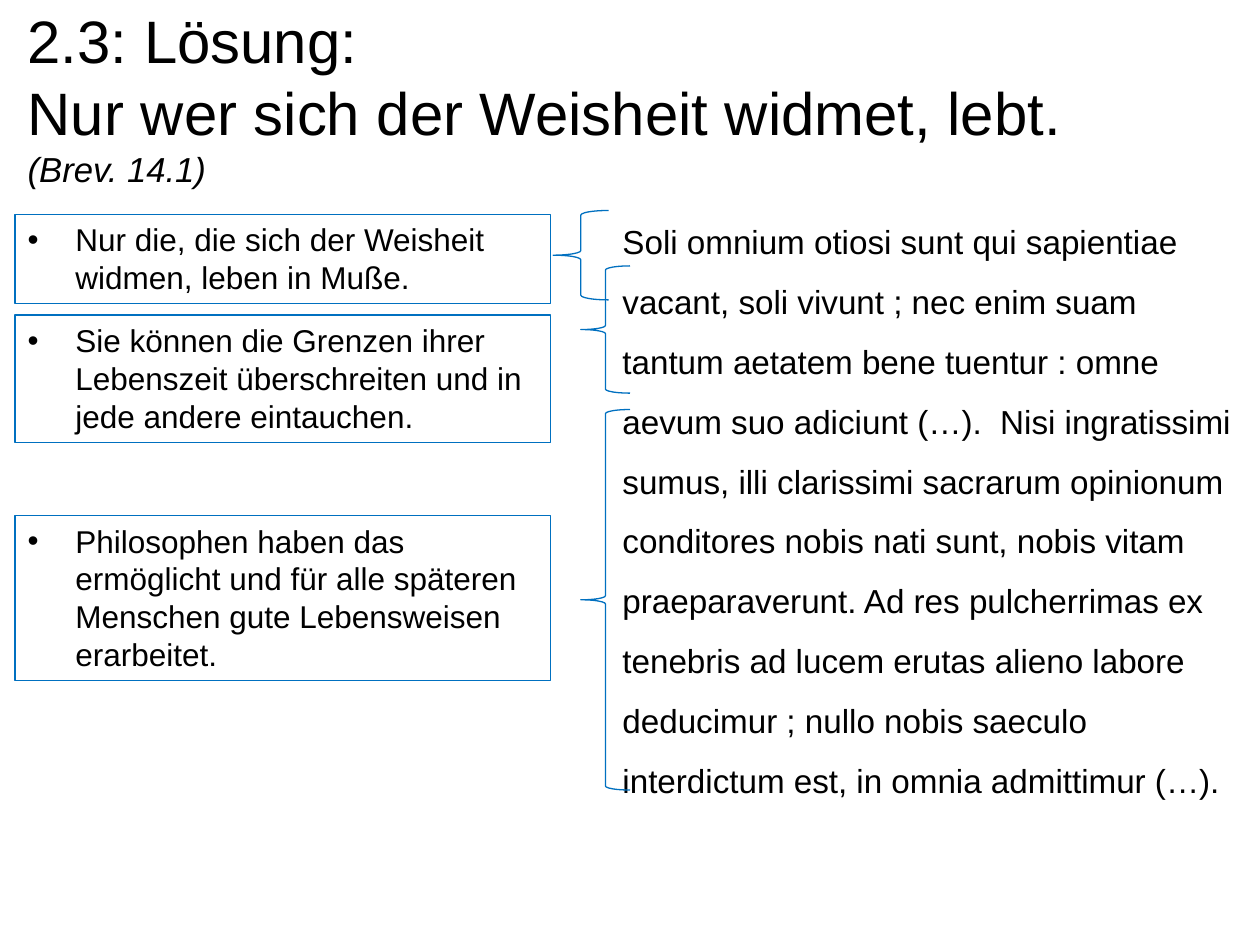
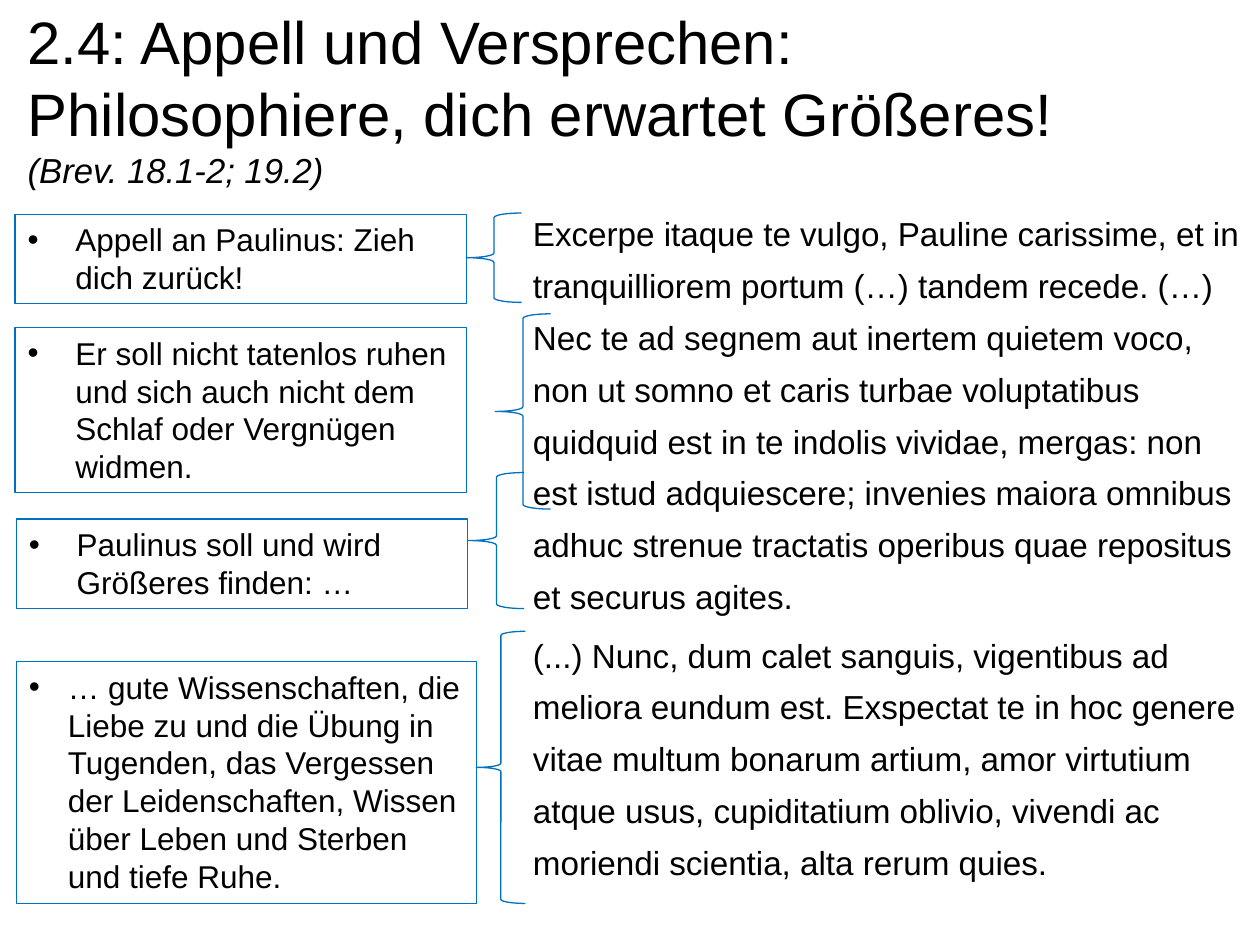
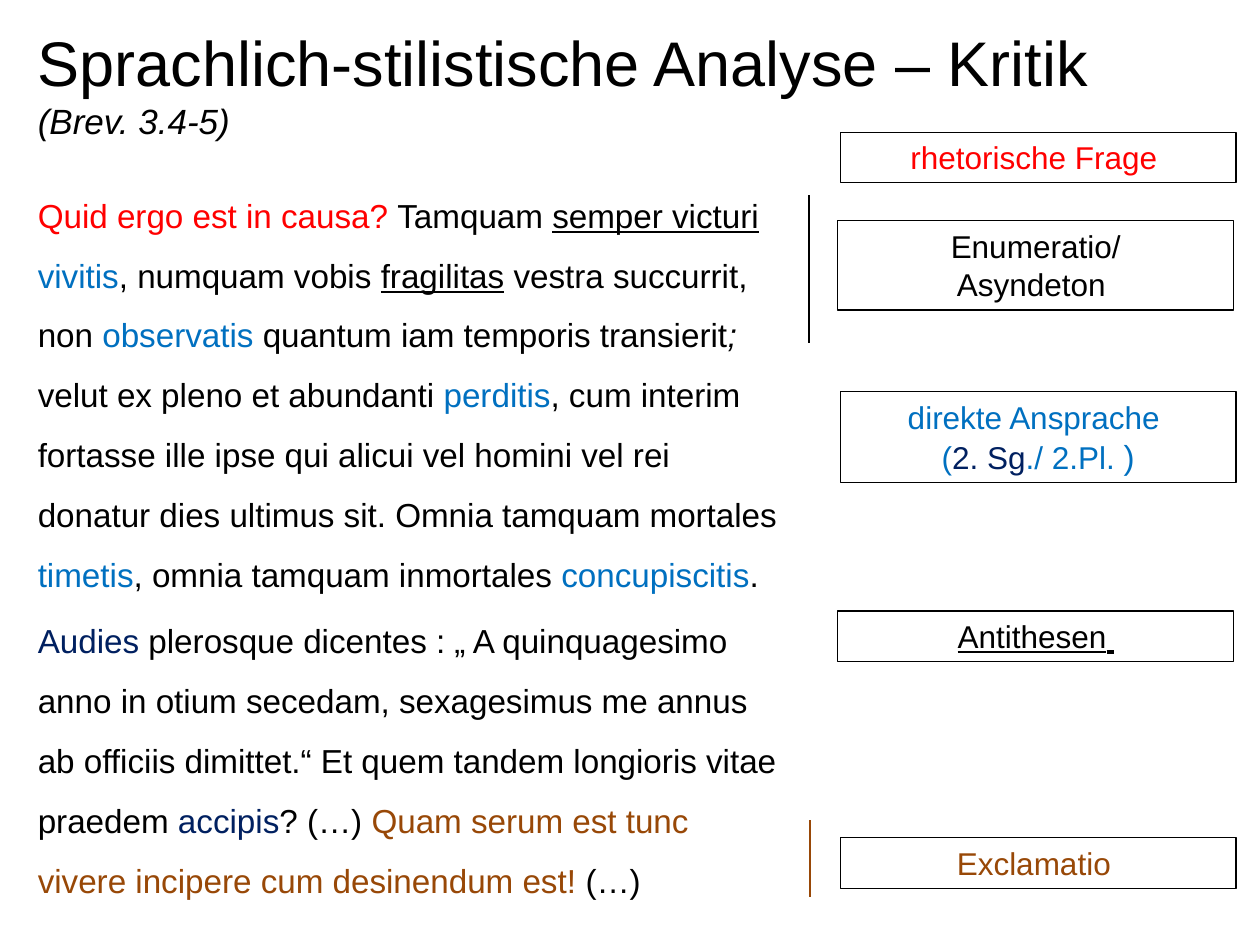
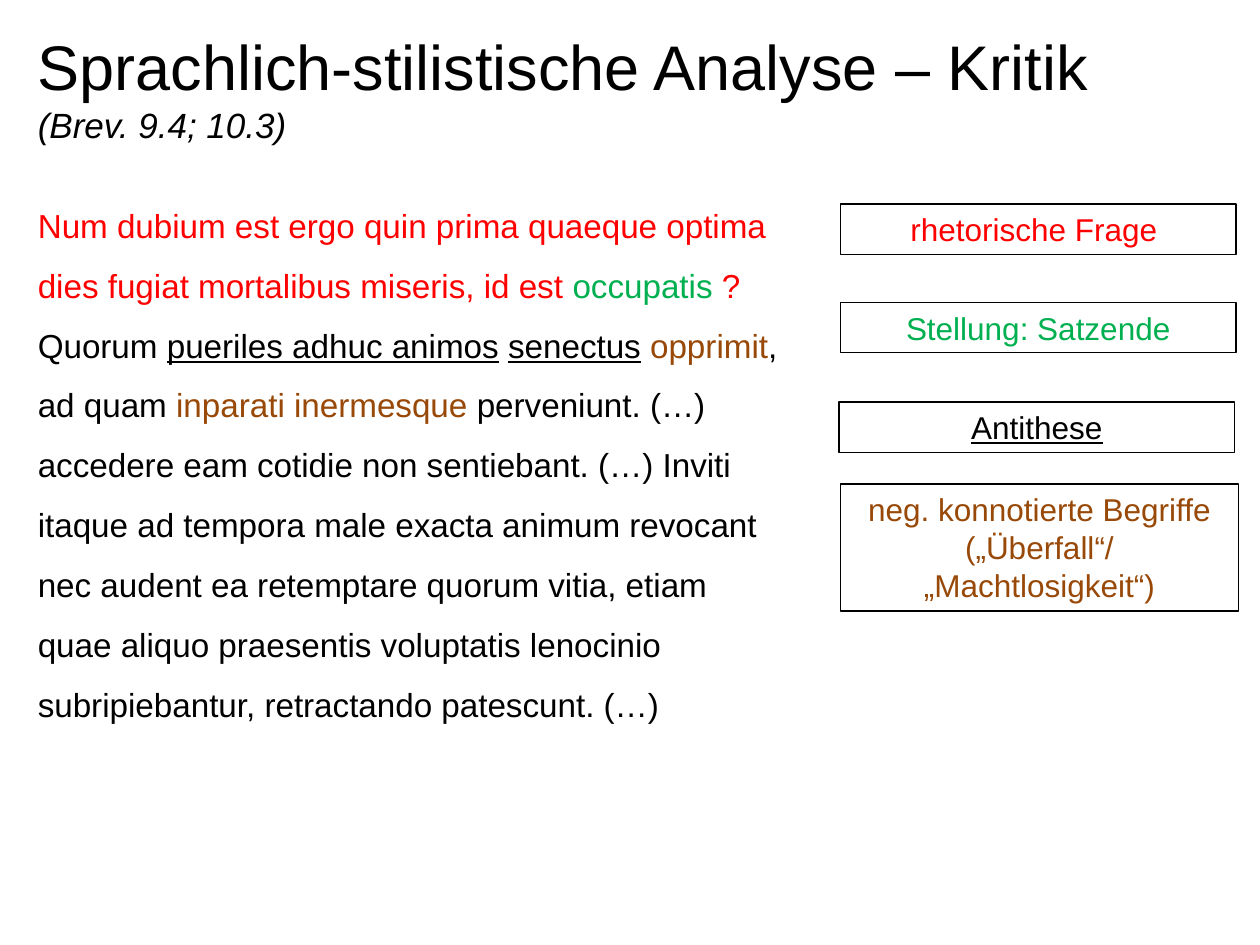
"""Builds four slides on Seneca's De brevitate vitae: two on its argument, two on its style."""
from copy import deepcopy

from lxml import etree
from pptx import Presentation
from pptx.dml.color import RGBColor
from pptx.enum.shapes import MSO_CONNECTOR, MSO_SHAPE
from pptx.enum.text import MSO_ANCHOR, MSO_AUTO_SIZE, PP_ALIGN
from pptx.oxml.ns import qn
from pptx.util import Inches, Pt

RECTANGLE, BRACE = MSO_SHAPE.RECTANGLE, MSO_SHAPE.RIGHT_BRACE
STRAIGHT = MSO_CONNECTOR.STRAIGHT
TOP, MIDDLE = MSO_ANCHOR.TOP, MSO_ANCHOR.MIDDLE
FIXED, GROW = MSO_AUTO_SIZE.NONE, MSO_AUTO_SIZE.SHAPE_TO_FIT_TEXT
LEFT, CENTER = PP_ALIGN.LEFT, PP_ALIGN.CENTER

INK, ACCENT, BROWN_HEX = "000000", "0070C0", "984807"
PLAIN = {}
RED = {"colour": "FF0000"}
BLUE = {"colour": ACCENT}
NAVY = {"colour": "002060"}
BROWN = {"colour": BROWN_HEX}
GREEN = {"colour": "00B050"}
UNDERLINED = {"underline": True}
ITALIC = {"italic": True}

deck = Presentation()
deck.slide_width, deck.slide_height = Inches(10), Inches(7.5)
COLUMN, ROW = deck.slide_width / 100, deck.slide_height / 75


def write(paragraph, runs, size):
    """Add styled runs to a paragraph; a newline ends a line."""
    for text, style in runs:
        lines = text.split("\n")
        for number, line in enumerate(lines):
            if line:
                run = paragraph.add_run()
                run.text = line
                run.font.name = style.get("font", "Arial")
                run.font.size = Pt(style.get("size", size))
                run.font.color.rgb = RGBColor.from_string(style.get("colour", INK))
                run.font.underline = style.get("underline", False)
                run.font.italic = style.get("italic", False)
            if number < len(lines) - 1:
                paragraph.add_line_break()
                paragraph._p[-1].append(deepcopy(run.font._element))


def place(shape, cell):
    """Put a shape on the grid of 100 columns and 75 rows."""
    column, row, columns, rows = cell
    shape.left, shape.top = round(column * COLUMN), round(row * ROW)
    shape.width, shape.height = round(columns * COLUMN), round(rows * ROW)


solution = {
    "title": "2.3: Lösung: \nNur wer sich der Weisheit widmet, lebt.\n",
    "source": "(Brev. 14.1)",
    "sizes": (34.2, 19.8),
    "title_cell": (1.2, 1.4, 97.6, 12.5),
    "latin_cell": (48.4, 15.5, 51.2, 59.5),
    "spacing": 1.5,
    "latin": [[(
        "Soli omnium otiosi sunt qui sapientiae vacant, soli vivunt ; nec enim suam "
        "tantum aetatem bene tuentur : omne aevum suo adiciunt (…).  Nisi ingratissimi "
        "sumus, illi clarissimi sacrarum opinionum conditores nobis nati sunt, nobis vitam "
        "praeparaverunt. Ad res pulcherrimas ex tenebris ad lucem erutas alieno labore "
        "deducimur ; nullo nobis saeculo interdictum est, in omnia admittimur (…).", PLAIN)]],
    "summaries": [
        ((1.2, 17, 42.5, 7.1), 0.38, (43.9, 16.7, 4.4, 7.1),
         "Nur die, die sich der Weisheit widmen, leben in Muße."),
        ((1.2, 25, 42.5, 10.1), 0.38, (46.1, 21.1, 3.9, 10.1),
         "Sie können die Grenzen ihrer Lebenszeit überschreiten und in jede andere eintauchen."),
        ((1.2, 40.9, 42.5, 13.1), 0.38, (46.1, 32.5, 3.9, 30.2),
         "Philosophen haben das ermöglicht und für alle späteren Menschen gute "
         "Lebensweisen erarbeitet."),
    ],
}

appeal = {
    "title": "2.4: Appell und Versprechen: \nPhilosophiere, dich erwartet Größeres! \n",
    "source": "(Brev. 18.1-2; 19.2)",
    "sizes": (34.2, 19.8),
    "title_cell": (1.2, 0, 93.8, 15.5),
    "latin_cell": (41.3, 15.5, 58.3, 59.5),
    "spacing": 1.3,
    "latin": [
        [("Excerpe itaque te vulgo, Pauline carissime, et in tranquilliorem portum (…) "
          "tandem recede. (…) Nec te ad segnem aut inertem quietem voco, non ut somno et "
          "caris turbae voluptatibus quidquid est in te indolis vividae, mergas: non est "
          "istud adquiescere; invenies maiora omnibus adhuc strenue tractatis operibus quae "
          "repositus et securus agites.", PLAIN)],
        [("(...) Nunc, dum calet sanguis, vigentibus ad meliora eundum est. Exspectat te in "
          "hoc genere vitae multum bonarum artium, amor virtutium atque usus, cupiditatium "
          "oblivio, vivendi ac moriendi scientia, alta rerum quies.", PLAIN)],
    ],
    "summaries": [
        ((1.2, 17, 35.8, 7.1), 0.38, (37, 16.9, 4.4, 7.1),
         "Appell an Paulinus: Zieh dich zurück!"),
        ((1.2, 26, 35.8, 13.1), 0.38, (39.3, 24.9, 4.4, 15.5),
         "Er soll nicht tatenlos ruhen und sich auch nicht dem Schlaf oder Vergnügen widmen."),
        ((1.3, 41.2, 35.8, 7.1), 0.38, (37.2, 37.5, 4.4, 10.8),
         "Paulinus soll und wird Größeres finden: …"),
        ((1.3, 52.5, 36.5, 19.2), 0.31, (37.8, 50.1, 3.9, 21.6),
         "… gute Wissenschaften, die Liebe zu und die Übung in Tugenden, das Vergessen der "
         "Leidenschaften, Wissen über Leben und Sterben und tiefe Ruhe."),
    ],
}

criticism = {
    "title": "Sprachlich-stilistische Analyse – Kritik \n",
    "source": "(Brev. 3.4-5)",
    "sizes": (36, 20),
    "title_cell": (2, 0.5, 90, 12.1),
    "latin_cell": (2, 13.4, 61.4, 61.1),
    "spacing": 1.5,
    "latin": [
        [("Quid ergo est in causa? ", RED), ("Tamquam ", PLAIN),
         ("semper victuri ", UNDERLINED), ("vivitis", BLUE), (", numquam vobis ", PLAIN),
         ("fragilitas", UNDERLINED), (" vestra succurrit, non ", PLAIN),
         ("observatis", BLUE), (" quantum iam temporis transierit", PLAIN), ("; ", ITALIC),
         ("velut ex pleno et abundanti ", PLAIN), ("perditis", BLUE),
         (", cum interim fortasse ille ipse qui alicui vel homini vel rei donatur dies "
          "ultimus sit. Omnia tamquam mortales ", PLAIN), ("timetis", BLUE),
         (", omnia tamquam inmortales ", PLAIN), ("concupiscitis", BLUE), (".", PLAIN)],
        [("Audies", NAVY),
         (" plerosque dicentes : „ A quinquagesimo anno in otium secedam, sexagesimus me "
          "annus ab officiis dimittet.“ Et quem tandem longioris vitae praedem ", PLAIN),
         ("accipis", NAVY), ("? (…) ", PLAIN),
         ("Quam serum est tunc vivere incipere cum desinendum est! ", BROWN), ("(…)", PLAIN)],
    ],
    "devices": [
        ((66.5, 17.5, 31.4, 7.1), [[("Enumeratio/", PLAIN)], [("Asyndeton ", PLAIN)]]),
        ((66.7, 10.5, 31.4, 4), [[("rhetorische Frage ", RED)]]),
        ((66.5, 48.5, 31.4, 4),
         [[("Antithesen", UNDERLINED), (" ", {"font": "Calibri", "underline": True})]]),
        ((66.7, 31.1, 31.4, 7.2),
         [[("direkte Ansprache ", BLUE)],
          [("(", BLUE), ("2. Sg", NAVY), ("./ 2.Pl. ", BLUE), (")", {**BLUE, "size": 19})]]),
        ((66.7, 66.5, 31.4, 4), [[("Exclamatio ", BROWN)]]),
    ],
    "margin_lines": [((64.2, 15.5, 0, 11.7), INK), ((64.3, 65.1, 0, 6.1), BROWN_HEX)],
}

old_age = {
    "title": "Sprachlich-stilistische Analyse – Kritik  \n",
    "source": "(Brev. 9.4; 10.3)",
    "sizes": (36, 20),
    "title_cell": (2, 0.6, 90, 12.5),
    "latin_cell": (2, 14.2, 61.4, 58),
    "spacing": 1.5,
    "latin": [
        [("Num dubium est ergo quin prima quaeque optima dies fugiat mortalibus miseris, "
          "id est ", RED), ("occupatis", GREEN), (" ? ", RED), ("Quorum ", PLAIN),
         ("pueriles adhuc animos", UNDERLINED), (" ", PLAIN), ("senectus", UNDERLINED),
         (" ", PLAIN), ("opprimit", BROWN), (", ad quam ", PLAIN),
         ("inparati inermesque ", BROWN),
         ("perveniunt. (…) accedere eam cotidie non sentiebant. (…) Inviti itaque ad "
          "tempora male exacta animum revocant nec audent ea retemptare quorum vitia, etiam "
          "quae aliquo praesentis voluptatis lenocinio subripiebantur, retractando "
          "patescunt. (…)", PLAIN)],
    ],
    "devices": [
        ((66.7, 16.2, 31.4, 4), [[("rhetorische Frage ", RED)]]),
        ((66.7, 24, 31.4, 4), [[("Stellung: Satzende", GREEN)]]),
        ((66.6, 31.9, 31.4, 4), [[("Antithese", UNDERLINED)]]),
        ((66.7, 38.4, 31.6, 10.1),
         [[("neg. konnotierte Begriffe", BROWN)], [("(„Überfall“/ „Machtlosigkeit“)", BROWN)]]),
    ],
}

for content in (solution, appeal, criticism, old_age):
    slide = deck.slides.add_slide(deck.slide_layouts[1])
    heading, latin = slide.placeholders
    heading_size, source_size = content["sizes"]

    place(heading, content["title_cell"])
    heading.text_frame.auto_size = FIXED
    heading.text_frame.vertical_anchor = MIDDLE
    heading_line = heading.text_frame.paragraphs[0]
    heading_line.alignment = LEFT
    write(heading_line, [(content["title"], PLAIN)], heading_size)
    write(heading_line, [(content["source"], ITALIC)], source_size)

    place(latin, content["latin_cell"])
    latin.text_frame.auto_size = FIXED
    for number, runs in enumerate(content["latin"]):
        passage = latin.text_frame.add_paragraph() if number else latin.text_frame.paragraphs[0]
        passage.line_spacing = content["spacing"]
        properties = passage._p.get_or_add_pPr()
        properties.set("marL", "0")
        properties.set("indent", "0")
        etree.SubElement(properties, qn("a:buNone"))
        write(passage, runs, 19)

    notes = [(cell, [[(text, PLAIN)]], ACCENT, indent)
             for cell, indent, _, text in content.get("summaries", [])]
    notes += [(cell, paragraphs, INK, 0) for cell, paragraphs in content.get("devices", [])]
    outlines = [(RECTANGLE, *note) for note in notes]
    outlines += [(BRACE, cell, [], ACCENT, 0) for _, _, cell, _ in content.get("summaries", [])]
    for kind, cell, paragraphs, colour, indent in outlines:
        outline = slide.shapes.add_shape(kind, 0, 0, 0, 0)
        place(outline, cell)
        outline.shadow.inherit = False
        outline.fill.background()
        outline.line.color.rgb = RGBColor.from_string(colour)
        outline.line.width = Pt(0.75)
        if kind == BRACE:
            outline.rotation = 180
            continue
        frame = outline.text_frame
        frame.word_wrap = True
        frame.auto_size = GROW
        frame.vertical_anchor = TOP
        for number, runs in enumerate(paragraphs):
            note_line = frame.add_paragraph() if number else frame.paragraphs[0]
            note_line.alignment = LEFT if indent else CENTER
            if indent:
                properties = note_line._p.get_or_add_pPr()
                properties.set("marL", str(Inches(indent)))
                properties.set("indent", str(-Inches(indent)))
                etree.SubElement(properties, qn("a:buFont"), typeface="Arial")
                etree.SubElement(properties, qn("a:buChar"), char="•")
            write(note_line, runs, 18)

    for cell, colour in content.get("margin_lines", []):
        margin_line = slide.shapes.add_connector(STRAIGHT, 0, 0, 0, 0)
        place(margin_line, cell)
        margin_line.line.color.rgb = RGBColor.from_string(colour)
        margin_line.line.width = Pt(1.25)
        etree.SubElement(margin_line._element.spPr, qn("a:effectLst"))

deck.save("out.pptx")
